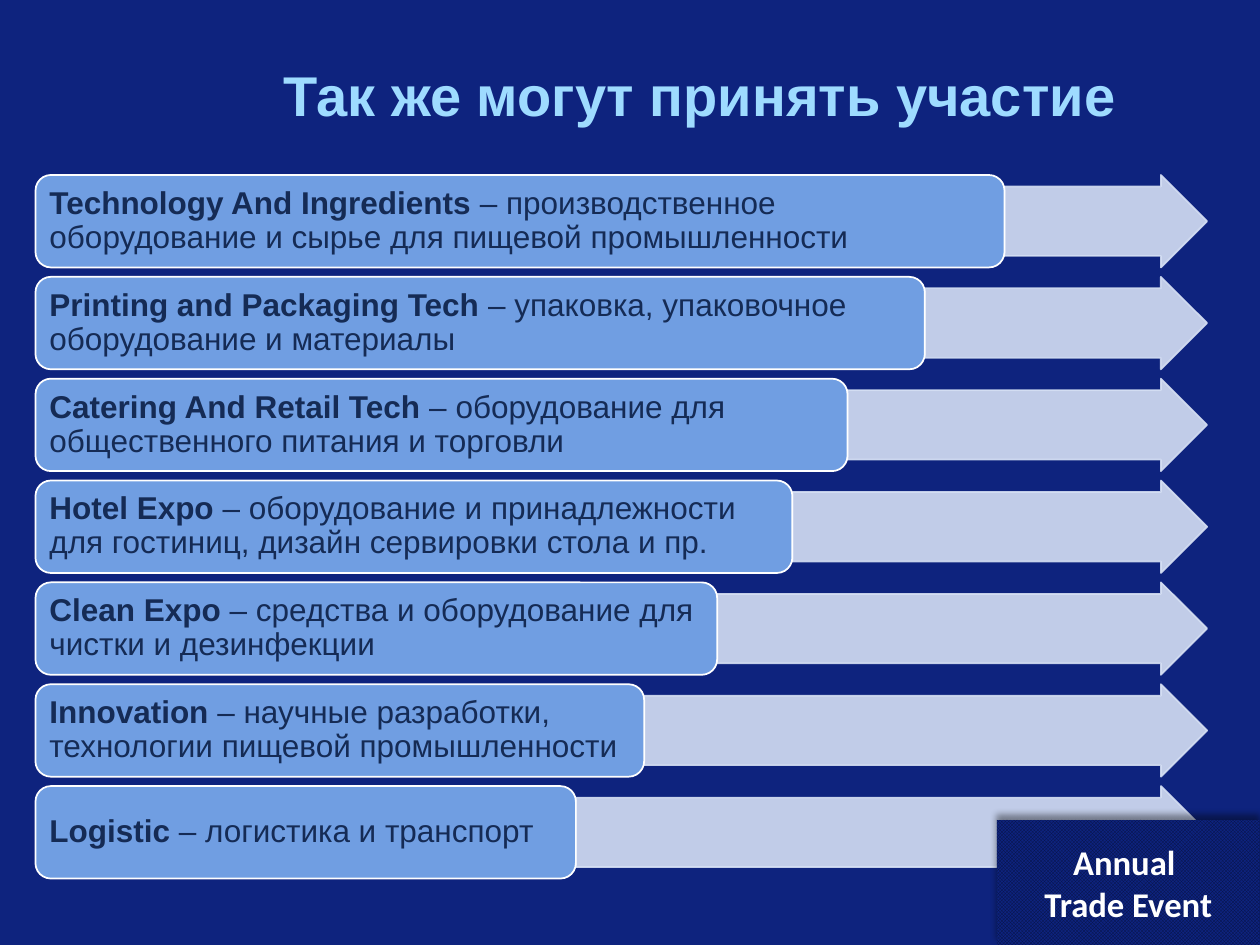
from lxml import etree
from pptx import Presentation
from pptx.dml.color import RGBColor
from pptx.enum import dml, shapes, text
from pptx.oxml.ns import qn
from pptx.util import Pt

NAVY, SKY, BLUE, PALE, INK, WHITE = (
    "0E237E", "9EDBFF", "709EE2", "D5DFF4", "152B55", "FFFFFF")
LEFT, TIP = 20.3, 689.8        # left edge of bars, tip of arrows
TOP, STEP, HIGH = 100, 58.2, 52.8

# Bar width, name, description
ROWS = [
    (553.7, "Technology And Ingredients",
     " – производственное оборудование и сырье для пищевой промышленности"),
    (508.2, "Printing and Packaging Tech",
     " – упаковка, упаковочное оборудование и материалы"),
    (464, "Catering And Retail Tech",
     " – оборудование для общественного питания и торговли"),
    (432.5, "Hotel Expo",
     " – оборудование и принадлежности для гостиниц, дизайн сервировки стола и пр."),
    (389.5, "Clean Expo",
     " – средства и оборудование для чистки и дезинфекции"),
    (347.8, "Innovation",
     " – научные разработки, технологии пищевой промышленности"),
    (308.8, "Logistic", " – логистика и транспорт"),
]


def rgb(code):
    return RGBColor.from_string(code)


def assign(item, form):
    for key, val in form.items():
        setattr(item, key, val)


def style(font, size, color, bold=True, name="Arial"):
    assign(font, {"size": Pt(size), "bold": bold, "name": name})
    font.color.rgb = rgb(color)


def add_box(slide, kind, left, top, wide, high):
    box = slide.shapes.add_shape(kind, Pt(left), Pt(top), Pt(wide), Pt(high))
    box.shadow.inherit = False
    return box


def paint(box, fill, line):
    box.fill.solid()
    box.fill.fore_color.rgb = rgb(fill)
    box.line.color.rgb = rgb(line)
    box.line.width = Pt(1)


def fade(node, share):
    for color in list(node.iter(qn("a:srgbClr"))):
        etree.SubElement(color, qn("a:alpha")).set("val", str(share * 1000))


def add_title(slide):
    title = slide.shapes.title
    assign(title, {"left": Pt(70.5), "top": Pt(31.7),
                   "width": Pt(659), "height": Pt(44.6)})
    frame = title.text_frame
    frame.text = "Так же могут принять участие"
    assign(frame, {"vertical_anchor": text.MSO_ANCHOR.MIDDLE,
                   "auto_size": text.MSO_AUTO_SIZE.NONE})
    para = frame.paragraphs[0]
    para.alignment = text.PP_ALIGN.CENTER
    style(para.font, 32, SKY)


def add_arrow(slide, left, top):
    arrow = add_box(slide, shapes.MSO_SHAPE.RIGHT_ARROW,
                    left, top, TIP - left, HIGH)
    arrow.adjustments[0] = 0.75
    arrow.adjustments[1] = 0.5
    paint(arrow, PALE, PALE)
    fade(arrow.element.spPr, 90)


def add_bar(slide, top, wide, name, note):
    bar = add_box(slide, shapes.MSO_SHAPE.ROUNDED_RECTANGLE,
                  LEFT, top, wide, HIGH)
    paint(bar, BLUE, WHITE)
    frame = bar.text_frame
    assign(frame, {"word_wrap": True,
                   "vertical_anchor": text.MSO_ANCHOR.MIDDLE,
                   "margin_left": Pt(5.4), "margin_right": Pt(5.4),
                   "margin_top": Pt(2.7), "margin_bottom": Pt(2.7)})
    para = frame.paragraphs[0]
    assign(para, {"alignment": text.PP_ALIGN.LEFT, "line_spacing": 0.9})
    for words, bold in ((name, True), (note, False)):
        run = para.add_run()
        run.text = words
        style(run.font, 18, INK, bold)


def add_badge(slide):
    badge = add_box(slide, shapes.MSO_SHAPE.RECTANGLE, 569.7, 468.6, 150, 71.4)
    badge.fill.patterned()
    badge.fill.pattern = dml.MSO_PATTERN.SMALL_CHECKER_BOARD
    badge.fill.fore_color.rgb = rgb("07123F")
    badge.fill.back_color.rgb = rgb(NAVY)
    badge.line.fill.background()
    # Shadow cast upwards
    effects = badge.element.spPr.find(qn("a:effectLst"))
    shade = etree.SubElement(effects, qn("a:outerShdw"), blurRad=str(Pt(4)),
                             dist=str(Pt(3)), dir="16200000", rotWithShape="0")
    etree.SubElement(shade, qn("a:srgbClr"), val="000000")
    fade(shade, 40)
    frame = badge.text_frame
    frame.text = "Annual \vTrade Event"
    assign(frame, {"word_wrap": True,
                   "vertical_anchor": text.MSO_ANCHOR.MIDDLE})
    para = frame.paragraphs[0]
    para.alignment = text.PP_ALIGN.CENTER
    style(para.font, 19.8, WHITE, name="Calibri")


def main():
    deck = Presentation()
    assign(deck, {"slide_width": Pt(720), "slide_height": Pt(540)})
    slide = deck.slides.add_slide(deck.slide_layouts[5])
    slide.background.fill.solid()
    slide.background.fill.fore_color.rgb = rgb(NAVY)
    add_title(slide)
    # Each bar with its arrow
    for i, (wide, name, note) in enumerate(ROWS):
        top = TOP + i * STEP
        add_arrow(slide, LEFT + wide, top)
        add_bar(slide, top, wide, name, note)
    add_badge(slide)
    deck.save("out.pptx")


if __name__ == "__main__":
    main()
